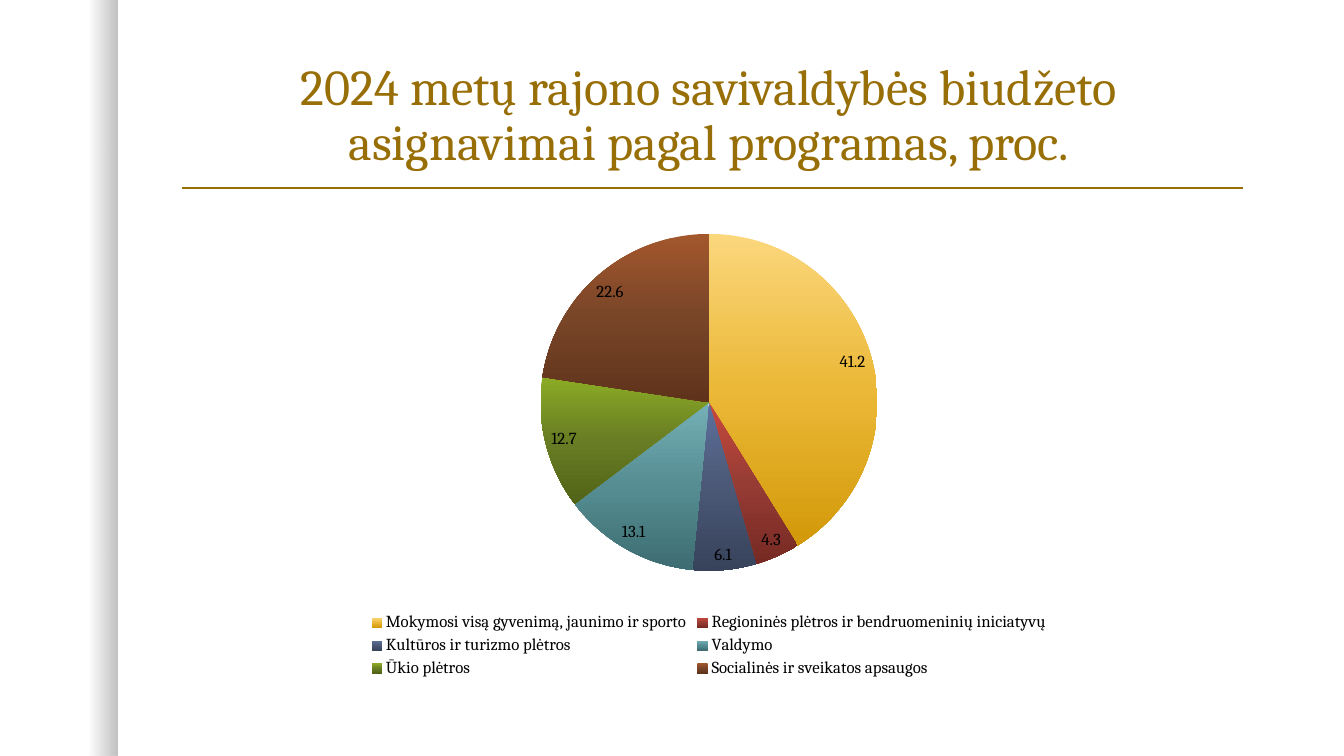
from lxml.etree import SubElement
from pptx import Presentation
from pptx.chart.data import CategoryChartData
from pptx.dml.color import RGBColor
from pptx.enum.chart import XL_CHART_TYPE as ChartType
from pptx.enum.chart import XL_LABEL_POSITION as LabelPosition
from pptx.enum.chart import XL_LEGEND_POSITION as LegendPosition
from pptx.enum.shapes import MSO_CONNECTOR as Connector
from pptx.enum.shapes import MSO_SHAPE as Shape
from pptx.enum.text import MSO_ANCHOR as Anchor
from pptx.enum.text import MSO_AUTO_SIZE as AutoSize
from pptx.enum.text import PP_ALIGN as Align
from pptx.oxml import parse_xml
from pptx.oxml.ns import nsdecls, qn
from pptx.util import Pt

EMU_PER_PX = 914400 / 100.8
FONT = "Cambria"
COLORS = {"gold": "986F07", "black": "000000", "axis_text": "303030"}

# Programme, share in percent, gradient from top to bottom
PROGRAMMES = [
    ("Mokymosi visą gyvenimą, jaunimo ir sporto", 41.2, ("FBD77C", "EBB837", "D29909")),
    ("Regioninės plėtros ir bendruomeninių iniciatyvų", 4.3, ("C8483E", "963C34", "762923")),
    ("Kultūros ir turizmo plėtros", 6.1, ("5D719D", "4B5876", "37425B")),
    ("Valdymo", 13.1, ("75B0B6", "558D92", "3D6D72")),
    ("Ūkio plėtros", 12.7, ("8BAB25", "687D24", "516317")),
    ("Socialinės ir sveikatos apsaugos", 22.6, ("A3572C", "784528", "5F331B")),
]


def px(*lengths):
    return [round(length * EMU_PER_PX) for length in lengths]


def set_font(font, size, color):
    font.name = FONT
    font.size = Pt(size)
    font.color.rgb = RGBColor.from_string(COLORS[color])


def set_gradient(properties, stops, angle):
    """Swap a solid fill for stops of (position %, colour, opacity %)."""
    gradient = parse_xml(f'<a:gradFill {nsdecls("a")} rotWithShape="1"/>')
    stop_list = SubElement(gradient, qn("a:gsLst"))
    for position, color, opacity in stops:
        stop = SubElement(stop_list, qn("a:gs"), pos=str(position * 1000))
        fill = SubElement(stop, qn("a:srgbClr"), val=color)
        if opacity < 100:
            SubElement(fill, qn("a:alpha"), val=str(opacity * 1000))
    SubElement(gradient, qn("a:lin"), ang=str(angle * 60000), scaled="0")
    properties.replace(properties.find(qn("a:solidFill")), gradient)


def add_side_shade(slide):
    shade = slide.shapes.add_shape(Shape.RECTANGLE, *px(0, 0, 117, 756))
    shade.shadow.inherit = False
    shade.line.fill.background()
    shade.fill.solid()
    stops = [(75, COLORS["black"], 0), (100, COLORS["black"], 25)]
    set_gradient(shade._element.spPr, stops, 0)


def add_title_rule(slide):
    rule = slide.shapes.add_connector(Connector.STRAIGHT, *px(182, 188, 1243, 188))
    rule.line.color.rgb = RGBColor.from_string(COLORS["gold"])
    rule.line.width = Pt(1)
    SubElement(rule._element.spPr, qn("a:effectLst"))


def set_title(slide, text):
    title = slide.shapes.title
    title.left, title.top, title.width, title.height = px(167, 42, 1084, 134)
    frame = title.text_frame
    frame.text = text
    frame.word_wrap = True
    frame.auto_size = AutoSize.NONE
    frame.vertical_anchor = Anchor.BOTTOM
    heading = frame.paragraphs[0]
    heading.alignment = Align.CENTER
    heading.line_spacing = 0.9
    set_font(heading.font, 36, "gold")


def add_programme_pie(slide):
    names, shares, gradients = zip(*PROGRAMMES)
    data = CategoryChartData()
    data.categories = names
    data.add_series("Series 1", shares)
    frame = slide.shapes.add_chart(ChartType.PIE, *px(167, 220, 1084, 462), data)
    chart = frame.chart
    chart.has_title = False
    set_font(chart.font, 10, "axis_text")

    # Legend
    chart.has_legend = True
    chart.legend.position = LegendPosition.BOTTOM
    chart.legend.include_in_layout = False
    set_font(chart.legend.font, 12, "black")

    # Value labels
    plot = chart.plots[0]
    plot.vary_by_categories = True
    plot.has_data_labels = True
    labels = plot.data_labels
    labels.show_value = True
    labels.show_percentage = False
    labels.position = LabelPosition.BEST_FIT
    set_font(labels.font, 12, "black")

    # Slices
    shares_series = plot.series[0]
    for index in range(len(gradients)):
        shares_series.points[index].format.fill.solid()
    slices = shares_series._element.findall(qn("c:dPt"))
    for pie_slice, colors in zip(slices, gradients):
        stops = [(50 * step, color, 100) for step, color in enumerate(colors)]
        set_gradient(pie_slice.find(qn("c:spPr")), stops, 90)


def main():
    deck = Presentation()
    deck.slide_width, deck.slide_height = px(1344, 756)
    slide = deck.slides.add_slide(deck.slide_layouts[5])
    add_side_shade(slide)
    add_title_rule(slide)
    set_title(slide, "2024 metų rajono savivaldybės biudžeto asignavimai pagal programas, proc.")
    add_programme_pie(slide)
    deck.save("out.pptx")


if __name__ == "__main__":
    main()
